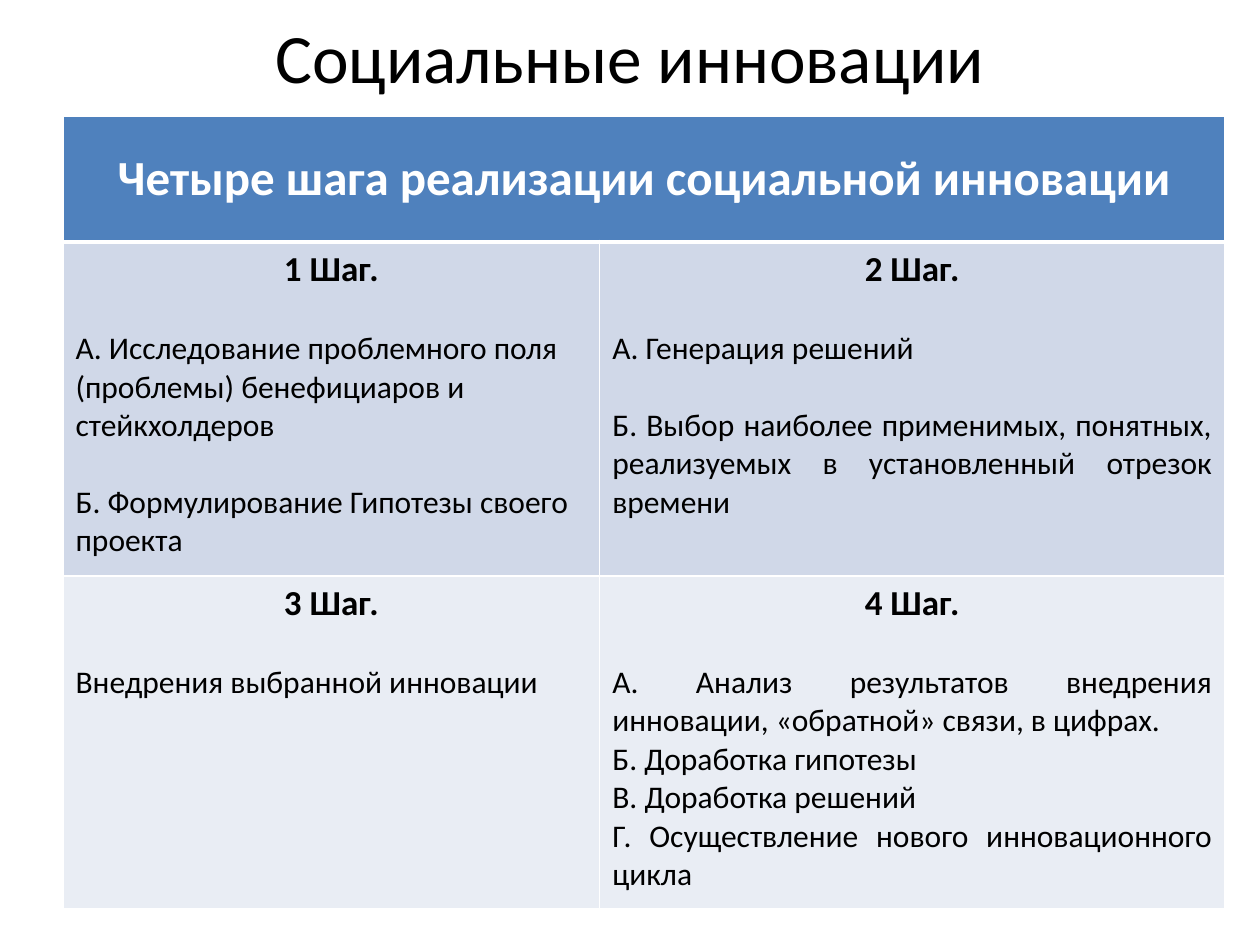
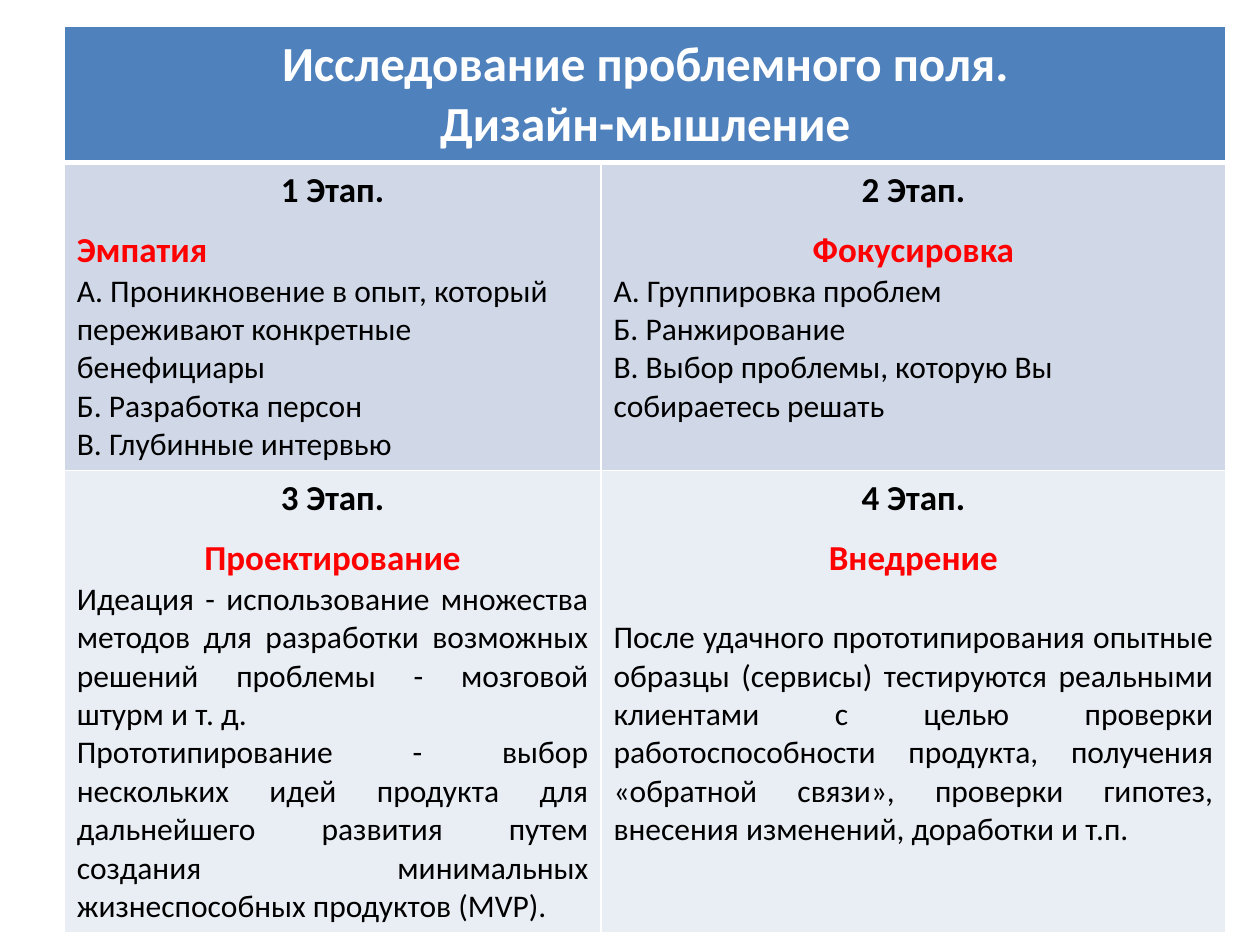
"""Build two slides on the steps of social innovation and the stages of design thinking."""
from dataclasses import dataclass

from lxml import etree
from pptx import Presentation
from pptx import util as u
from pptx.dml import color
from pptx.enum import text
from pptx.oxml import ns


@dataclass(frozen=True)
class Theme:
    font: str = "Calibri"
    ink: str = "000000"
    paper: str = "FFFFFF"
    accent: str = "FF0000"
    header: str = "4F81BD"
    bands: tuple = ("D0D8E8", "E9EDF4")
    title_size: float = 39.6
    header_size: float = 28
    step_size: float = 20
    body_size: float = 18
    line_gap: float = 22
    small_gap: float = 10
    rule: float = 1
    header_rule: float = 3


THEME = Theme()
LEFT, CENTER, JUSTIFY = text.PP_ALIGN.LEFT, text.PP_ALIGN.CENTER, text.PP_ALIGN.JUSTIFY
STYLES = {
    "title": (THEME.title_size, THEME.ink, False),
    "header": (THEME.header_size, THEME.paper, True),
    "step": (THEME.step_size, THEME.ink, True),
    "stage": (THEME.step_size, THEME.accent, True),
    "body": (THEME.body_size, THEME.ink, False),
}
COLUMNS = (4.26, 4.96)
LINE, SMALL = THEME.line_gap, THEME.small_gap


def write(frame, lines):
    """Fill a text frame with (style, alignment, gap before, wording) lines."""
    for number, (style, align, gap, wording) in enumerate(lines):
        paragraph = frame.add_paragraph() if number else frame.paragraphs[0]
        paragraph.alignment = align
        paragraph.space_before = u.Pt(gap)
        run = paragraph.add_run()
        run.text = wording
        size, ink, bold = STYLES[style]
        run.font.name = THEME.font
        run.font.size = u.Pt(size)
        run.font.bold = bold
        run.font.color.rgb = color.RGBColor.from_string(ink)


def finish_cell(cell, fill, top, bottom):
    """Give a cell its fill and its white rules, with widths in points."""
    cell.fill.solid()
    cell.fill.fore_color.rgb = color.RGBColor.from_string(fill)
    properties = cell._tc.get_or_add_tcPr()
    widths = {"L": THEME.rule, "R": THEME.rule, "T": top, "B": bottom}
    for position, (side, width) in enumerate(widths.items()):
        rule = etree.Element(ns.qn(f"a:ln{side}"), w=str(u.Pt(width)))
        solid = etree.SubElement(rule, ns.qn("a:solidFill"))
        etree.SubElement(solid, ns.qn("a:srgbClr"), val=THEME.paper)
        properties.insert(position, rule)


SLIDES = [
    {
        "title": "Социальные инновации",
        "place": (0.5, 0.92),
        "rows": (1, 2.65, 2.64),
        "header": ["Четыре шага реализации социальной инновации"],
        "step": "Шаг.",
        "cells": [
            [
                ("body", LEFT, LINE, "А. Исследование проблемного поля (проблемы) бенефициаров и стейкхолдеров"),
                ("body", LEFT, LINE, "Б. Формулирование Гипотезы своего проекта"),
            ],
            [
                ("body", JUSTIFY, LINE, "А. Генерация решений"),
                ("body", JUSTIFY, LINE, "Б. Выбор наиболее применимых, понятных, реализуемых в установленный отрезок времени"),
            ],
            [("body", JUSTIFY, LINE, "Внедрения выбранной инновации")],
            [
                ("body", JUSTIFY, LINE, "А. Анализ результатов внедрения инновации, «обратной» связи, в цифрах."),
                ("body", JUSTIFY, 0, "Б. Доработка гипотезы"),
                ("body", JUSTIFY, 0, "В. Доработка решений"),
                ("body", JUSTIFY, 0, "Г. Осуществление нового инновационного цикла"),
            ],
        ],
    },
    {
        "title": None,
        "place": (0.51, 0.21),
        "rows": (1.08, 2.37, 3.55),
        "header": ["Исследование проблемного поля.", "Дизайн-мышление"],
        "step": "Этап.",
        "cells": [
            [
                ("stage", LEFT, SMALL, "Эмпатия"),
                ("body", LEFT, 0, "А. Проникновение в опыт, который переживают конкретные бенефициары"),
                ("body", LEFT, 0, "Б. Разработка персон"),
                ("body", LEFT, 0, "В. Глубинные интервью"),
            ],
            [
                ("stage", CENTER, SMALL, "Фокусировка"),
                ("body", LEFT, 0, "А. Группировка проблем"),
                ("body", LEFT, 0, "Б. Ранжирование"),
                ("body", LEFT, 0, "В. Выбор проблемы, которую Вы собираетесь решать"),
            ],
            [
                ("stage", CENTER, SMALL, "Проектирование"),
                ("body", JUSTIFY, 0, "Идеация - использование множества методов для разработки возможных "
                                     "решений проблемы - мозговой штурм и т. д."),
                ("body", JUSTIFY, 0, "Прототипирование - выбор нескольких идей продукта для дальнейшего развития "
                                     "путем создания минимальных жизнеспособных продуктов (MVP)."),
            ],
            [
                ("stage", CENTER, SMALL, "Внедрение"),
                ("body", JUSTIFY, LINE, "После удачного прототипирования опытные образцы (сервисы) тестируются "
                                        "реальными клиентами с целью проверки работоспособности продукта, получения "
                                        "«обратной связи», проверки гипотез, внесения изменений, доработки и т.п."),
            ],
        ],
    },
]

deck = Presentation()
deck.slide_width, deck.slide_height = u.Inches(10), u.Inches(7.5)
title_only, blank = deck.slide_layouts[5], deck.slide_layouts[6]

for content in SLIDES:
    slide = deck.slides.add_slide(title_only if content["title"] else blank)
    if content["title"]:
        heading = slide.shapes.title
        heading.left, heading.top = u.Inches(0.5), u.Inches(0.13)
        heading.width, heading.height = u.Inches(9), u.Inches(0.63)
        heading.text_frame.auto_size = text.MSO_AUTO_SIZE.NONE
        heading.text_frame.vertical_anchor = text.MSO_ANCHOR.MIDDLE
        write(heading.text_frame, [("title", CENTER, 0, content["title"])])

    left, top = content["place"]
    steps = slide.shapes.add_table(
        len(content["rows"]), len(COLUMNS), u.Inches(left), u.Inches(top),
        u.Inches(sum(COLUMNS)), u.Inches(sum(content["rows"])),
    ).table
    for column, width in zip(steps.columns, COLUMNS):
        column.width = u.Inches(width)
    for row, height in zip(steps.rows, content["rows"]):
        row.height = u.Inches(height)

    header = steps.cell(0, 0)
    header.merge(steps.cell(0, 1))
    header.vertical_anchor = text.MSO_ANCHOR.MIDDLE
    write(header.text_frame, [("header", CENTER, 0, line) for line in content["header"]])
    for column in range(len(COLUMNS)):
        finish_cell(steps.cell(0, column), THEME.header, THEME.rule, THEME.header_rule)

    for index, lines in enumerate(content["cells"]):
        band, column = divmod(index, len(COLUMNS))
        cell = steps.cell(band + 1, column)
        step = ("step", CENTER, 0, f"{index + 1} {content['step']}")
        write(cell.text_frame, [step, *lines])
        finish_cell(cell, THEME.bands[band], THEME.rule if band else THEME.header_rule, THEME.rule)

deck.save("out.pptx")
